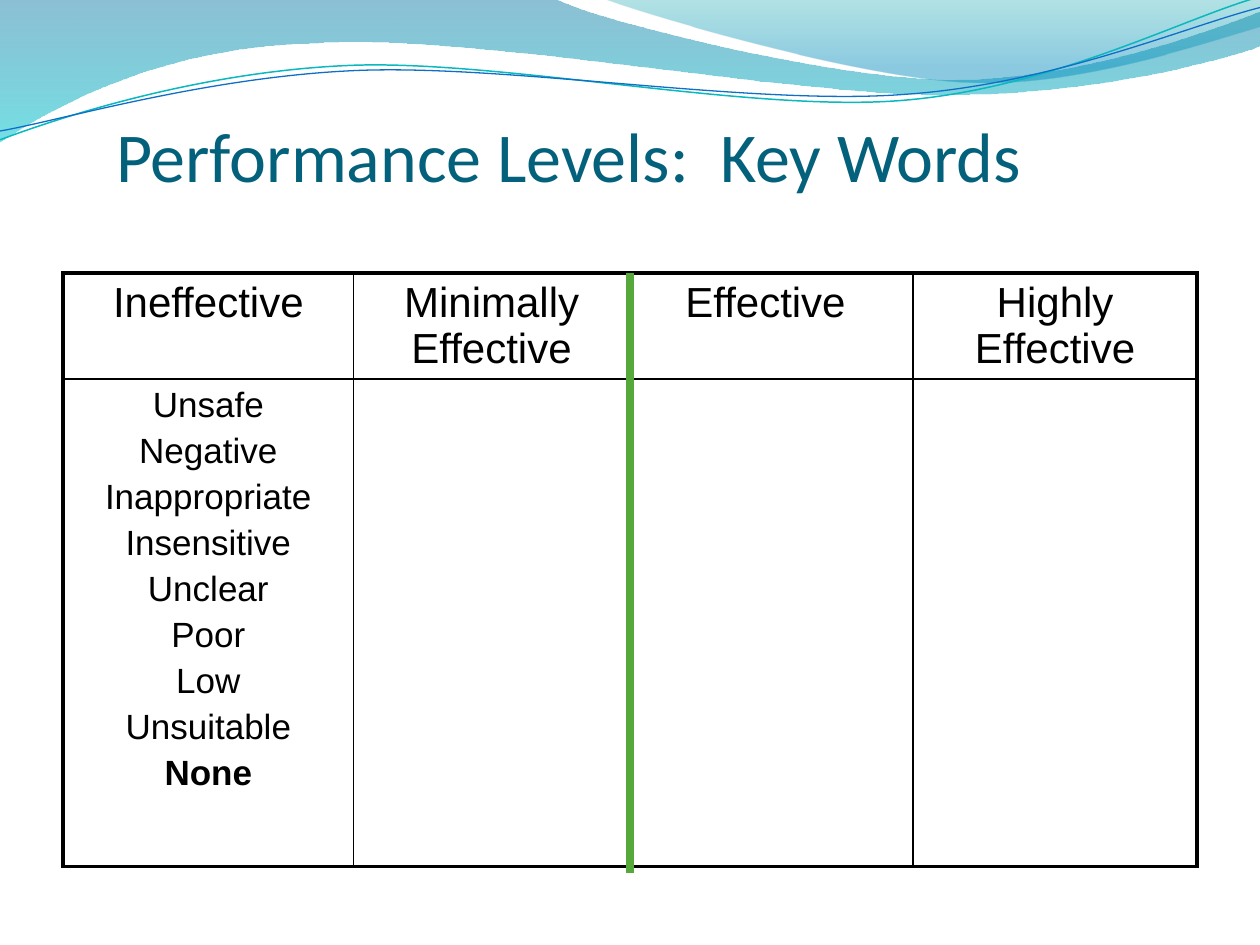
import dataclasses
from typing import Optional

import pptx
import pptx.dml.color
import pptx.enum.shapes
import pptx.enum.text
import pptx.oxml
import pptx.oxml.ns
import pptx.util
from pptx.util import Cm, Pt

RGBColor = pptx.dml.color.RGBColor
BLACK = RGBColor(0x00, 0x00, 0x00)
TITLE_BLUE = RGBColor(0x04, 0x61, 0x7B)
DIVIDER_GREEN = RGBColor(0x55, 0xA8, 0x39)
DEEP_BLUE = RGBColor(0x00, 0x74, 0xA1)
AQUA = RGBColor(0x00, 0xC6, 0xCF)
TEAL = RGBColor(0x00, 0xA1, 0xA9)
SKY_BLUE = RGBColor(0x00, 0x8B, 0xBF)
LINE_TEAL = RGBColor(0x0A, 0xB8, 0xBF)
LINE_BLUE = RGBColor(0x0F, 0x6F, 0xC6)

WAVE_UNIT = Cm(0.0254)  # wave points count in thousandths of the slide width
OUTER, INNER = Pt(2.25), Pt(1)
ALIGN = pptx.enum.text.PP_ALIGN
NAMESPACE = pptx.oxml.ns.nsdecls("a")


@dataclasses.dataclass
class Stop:
    position: float
    color: RGBColor
    opacity: int


@dataclasses.dataclass
class Wave:
    """A run of points: a pair is a corner, a six-tuple a Bezier curve."""
    points: list
    stops: Optional[list] = None
    line_color: Optional[RGBColor] = None
    line_width: float = 0


WAVES = [
    Wave([(0, 0), (440, -1), (476, 17, 664, 63, 758, 63),
          (853, 63, 958, 26, 1000, 9), (1001, 36),
          (983, 44, 870, 76, 746, 75), (622, 75, 382, 28, 257, 34),
          (129, 36, 46, 83, -1, 113)],
         stops=[Stop(0, DEEP_BLUE, 45), Stop(1, AQUA, 55)]),
    Wave([(479, -1), (509, 11, 682, 62, 769, 65),
          (856, 69, 961, 32, 1000, 21), (1000, 0)],
         stops=[Stop(0, TEAL, 30), Stop(0.8, SKY_BLUE, 45)]),
    Wave([(0, 111), (48, 93, 158, 57, 277, 52),
          (395, 47, 593, 89, 713, 80), (833, 71, 938, 15, 998, -2)],
         line_color=LINE_TEAL, line_width=0.85),
    Wave([(0, 104), (47, 96, 164, 61, 283, 56),
          (403, 51, 597, 84, 717, 75), (836, 67, 941, 21, 1000, 6)],
         line_color=LINE_BLUE, line_width=0.75),
]

LEVELS = ["Ineffective", "Minimally Effective", "Effective ", "Highly Effective"]
INEFFECTIVE_WORDS = ["Unsafe", "Negative", "Inappropriate", "Insensitive",
                     "Unclear", "Poor", "Low", "Unsuitable", "None"]
COLUMN_WIDTHS = [5.86, 5.56, 5.72, 5.72]
ROW_HEIGHTS = [2.13, 9.82]


def bend(shape, points: list) -> None:
    """Make Bezier curves of the outline's segments that have control points."""
    left = min(point[-2] for point in points)
    top = min(point[-1] for point in points)
    segments = shape.element.findall(".//" + pptx.oxml.ns.qn("a:lnTo"))
    for segment, point in zip(segments, points[1:]):
        if len(point) == 6:
            pairs = "".join(f'<a:pt x="{x - left}" y="{y - top}"/>'
                            for x, y in zip(point[::2], point[1::2]))
            segment.getparent().replace(segment, pptx.oxml.parse_xml(
                f"<a:cubicBezTo {NAMESPACE}>{pairs}</a:cubicBezTo>"))


def draw_wave(slide, wave: Wave) -> None:
    corners = [point[-2:] for point in wave.points]
    builder = slide.shapes.build_freeform(*corners[0], scale=WAVE_UNIT)
    builder.add_line_segments(corners[1:], close=wave.stops is not None)
    shape = builder.convert_to_shape()
    bend(shape, wave.points)
    shape.shadow.inherit = False
    if wave.stops is None:
        shape.fill.background()
        shape.line.color.rgb = wave.line_color
        shape.line.width = Pt(wave.line_width)
        return
    shape.line.fill.background()
    shape.fill.gradient()
    shape.fill.gradient_angle = 270
    for target, stop in zip(shape.fill.gradient_stops, wave.stops):
        target.position = stop.position
        target.color.rgb = stop.color
    colors = shape.element.spPr.findall(".//" + pptx.oxml.ns.qn("a:srgbClr"))
    for color, stop in zip(colors, wave.stops):
        color.append(pptx.oxml.parse_xml(
            f'<a:alpha {NAMESPACE} val="{stop.opacity * 1000}"/>'))


def write(paragraph, text: str, *, size: float, font: str = "Arial",
          color: RGBColor = BLACK, bold: bool = False,
          align=ALIGN.CENTER, space_before: float = 0) -> None:
    paragraph.alignment = align
    paragraph.space_before = Pt(space_before)
    run = paragraph.add_run()
    run.text = text
    run.font.size = Pt(size)
    run.font.name = font
    run.font.bold = bold
    run.font.color.rgb = color


def set_borders(cell, row: int, column: int) -> None:
    on_outside = {"L": column == 0, "R": column == len(LEVELS) - 1,
                  "T": row == 0, "B": row == len(ROW_HEIGHTS) - 1}
    properties = cell._tc.get_or_add_tcPr()
    for side, outside in on_outside.items():
        properties.append(pptx.oxml.parse_xml(
            f'<a:ln{side} {NAMESPACE} w="{OUTER if outside else INNER}">'
            f'<a:solidFill><a:srgbClr val="{BLACK}"/></a:solidFill></a:ln{side}>'))
    cell.fill.background()


def draw_levels_table(slide) -> None:
    levels = slide.shapes.add_table(
        len(ROW_HEIGHTS), len(LEVELS), Cm(1.27), Cm(5.5),
        Cm(sum(COLUMN_WIDTHS)), Cm(sum(ROW_HEIGHTS))).table
    levels.first_row = levels.horz_banding = False
    for column, width in zip(levels.columns, COLUMN_WIDTHS):
        column.width = Cm(width)
    for row, height in zip(levels.rows, ROW_HEIGHTS):
        row.height = Cm(height)
    for row in range(len(ROW_HEIGHTS)):
        for column in range(len(LEVELS)):
            set_borders(levels.cell(row, column), row, column)

    for column, level in enumerate(LEVELS):
        write(levels.cell(0, column).text_frame.paragraphs[0], level,
              size=24, space_before=4.8)
    words = levels.cell(1, 0).text_frame
    for index, word in enumerate(INEFFECTIVE_WORDS):
        paragraph = words.add_paragraph() if index else words.paragraphs[0]
        write(paragraph, word, size=20, bold=word == "None", space_before=4)


def draw_divider(slide) -> None:
    divider = slide.shapes.add_connector(
        pptx.enum.shapes.MSO_CONNECTOR.STRAIGHT, Cm(12.7), Cm(5.51), Cm(12.7), Cm(17.6))
    divider.line.color.rgb = DIVIDER_GREEN
    divider.line.width = Pt(4.5)
    divider.element.spPr.append(pptx.oxml.parse_xml(f"<a:effectLst {NAMESPACE}/>"))


def place_title(slide) -> None:
    title = slide.shapes.title
    title.left, title.top, title.width, title.height = Cm(2.34), Cm(0.79), Cm(22.86), Cm(3.18)
    frame = title.text_frame
    frame.word_wrap = True
    frame.auto_size = pptx.enum.text.MSO_AUTO_SIZE.NONE
    frame.vertical_anchor = pptx.enum.text.MSO_ANCHOR.BOTTOM
    frame.margin_left = frame.margin_right = frame.margin_bottom = 0
    frame.margin_top = Cm(0.13)
    write(frame.paragraphs[0], "Performance Levels:  Key Words", size=40,
          font="Calibri", color=TITLE_BLUE, align=ALIGN.LEFT)
    # Bring the title in front of the waves
    title.element.getparent().append(title.element)


def main() -> None:
    deck = pptx.Presentation()
    deck.slide_width, deck.slide_height = Cm(25.4), Cm(19.05)
    slide = deck.slides.add_slide(deck.slide_layouts[5])
    for wave in WAVES:
        draw_wave(slide, wave)
    place_title(slide)
    draw_levels_table(slide)
    draw_divider(slide)
    deck.save("out.pptx")


if __name__ == "__main__":
    main()
